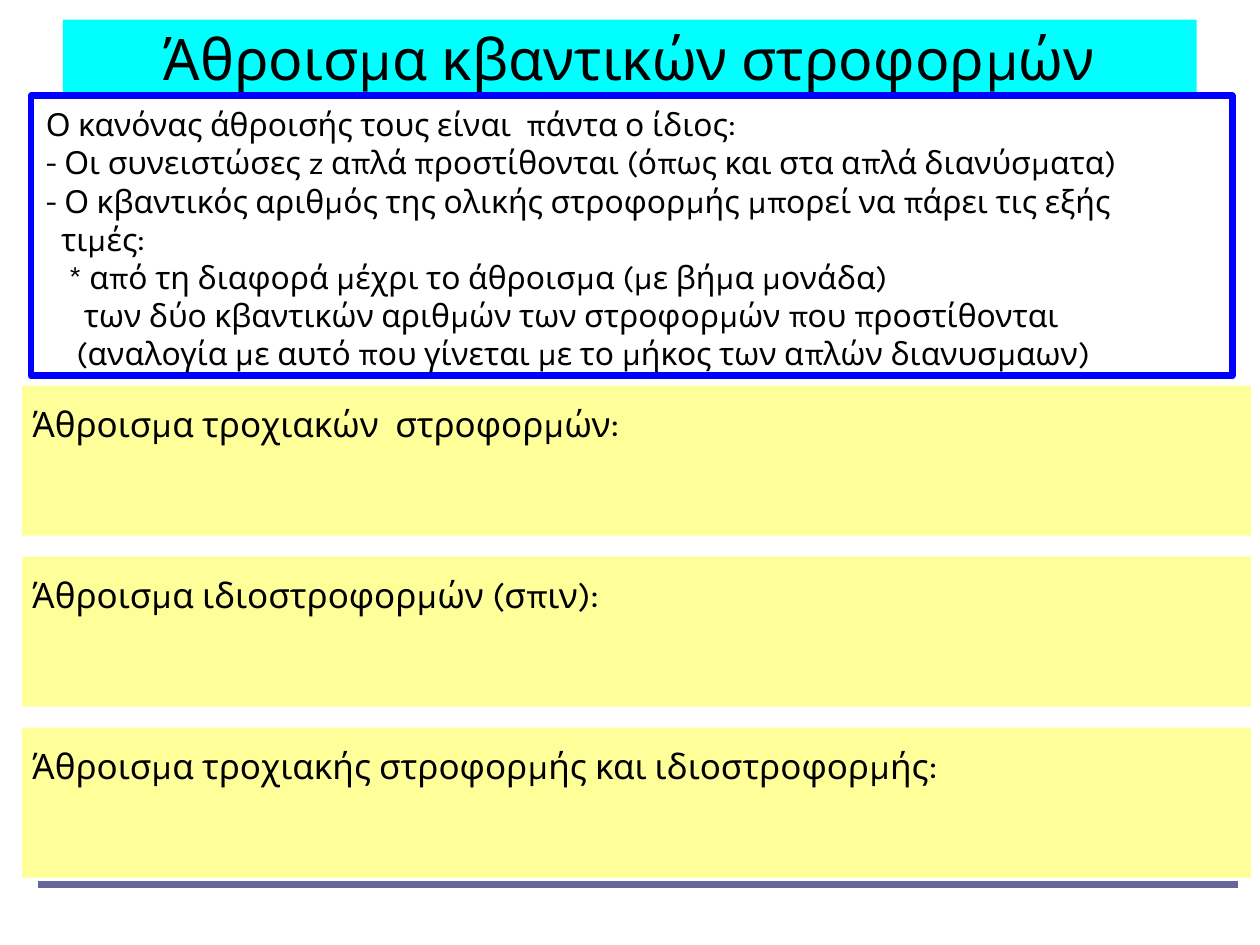
"""Build the slide on adding quantum angular momenta."""
import pptx
import pptx.util
import pptx.dml.color
import pptx.enum.shapes
import pptx.enum.text
import lxml.etree

Pt = pptx.util.Pt
ANCHOR = pptx.enum.text.MSO_ANCHOR
ALIGN = pptx.enum.text.PP_ALIGN
DRAWING = "{http://schemas.openxmlformats.org/drawingml/2006/main}"
COLOURS = {"text": "000000", "title": "00FFFF", "border": "0000FF",
           "panel": "FFFF99", "rule": "666699"}


def colour(name):
    return pptx.dml.color.RGBColor.from_string(COLOURS[name])


def format_text(frame, size, align, anchor, side, edge):
    frame.auto_size = pptx.enum.text.MSO_AUTO_SIZE.NONE
    frame.vertical_anchor = anchor
    frame.margin_left = frame.margin_right = Pt(side)
    frame.margin_top = frame.margin_bottom = Pt(edge)
    for paragraph in frame.paragraphs:
        paragraph.alignment = align
        paragraph.space_before = Pt(0)
        paragraph.font.size = Pt(size)
        paragraph.font.name = "Karla"
        paragraph.font.color.rgb = colour("text")


presentation = pptx.Presentation()
presentation.slide_width = Pt(793.7)
presentation.slide_height = Pt(595.28)
presentation.element.sldSz.attrib.pop("type", None)
slide = presentation.slides.add_slide(presentation.slide_layouts[1])
title, rules = slide.placeholders

footer_line = slide.shapes.add_connector(
    pptx.enum.shapes.MSO_CONNECTOR.STRAIGHT, Pt(23.8), Pt(557), Pt(779.8), Pt(557))
footer_line.line.color.rgb = colour("rule")
footer_line.line.width = Pt(4.31)
lxml.etree.SubElement(footer_line._element.spPr, DRAWING + "effectLst")

title.left, title.top, title.width, title.height = Pt(39.6), Pt(12.4), Pt(714.2), Pt(48.2)
title.fill.solid()
title.fill.fore_color.rgb = colour("title")
title.text_frame.text = "Άθροισμα κβαντικών στροφορμών"
format_text(title.text_frame, 36, ALIGN.CENTER, ANCHOR.MIDDLE, 0, 0)

rule_lines = [
    (0, "Ο κανόνας άθροισής τους είναι  πάντα ο ίδιος:"),
    (0, "- Οι συνειστώσες z απλά προστίθονται (όπως και στα απλά διανύσματα)"),
    (0, "- Ο κβαντικός αριθμός της ολικής στροφορμής μπορεί να πάρει τις εξής"),
    (9.6, "τιμές:"),
    (14.4, "* από τη διαφορά μέχρι το άθροισμα (με βήμα μονάδα)"),
    (24, "των δύο κβαντικών αριθμών των στροφορμών που προστίθονται"),
    (19.2, "(αναλογία με αυτό που γίνεται με το μήκος των απλών διανυσμαων)"),
]
rules.left, rules.top, rules.width, rules.height = Pt(19.5), Pt(60.4), Pt(756.7), Pt(176.4)
rules.line.color.rgb = colour("border")
rules.line.width = Pt(4.31)
rules.text_frame.text = "\n".join(line for indent, line in rule_lines)
format_text(rules.text_frame, 20, ALIGN.LEFT, ANCHOR.TOP, 9.36, 5.76)
for paragraph, (indent, line) in zip(rules.text_frame.paragraphs, rule_lines):
    properties = paragraph._p.get_or_add_pPr()
    properties.set("marL", str(Pt(indent)))
    properties.set("indent", "0")
    lxml.etree.SubElement(properties, DRAWING + "buNone")

sums = [
    ("Άθροισμα τροχιακών  στροφορμών:", 408),
    ("Άθροισμα ιδιοστροφορμών (σπιν):", 388),
    ("Άθροισμα τροχιακής στροφορμής και ιδιοστροφορμής:", 621),
]
for index, (label, width) in enumerate(sums):
    top = 243 + index * 107.7
    panel = slide.shapes.add_shape(
        pptx.enum.shapes.MSO_SHAPE.RECTANGLE, Pt(14), Pt(top), Pt(774), Pt(94.5))
    panel.shadow.inherit = False
    panel.fill.solid()
    panel.fill.fore_color.rgb = colour("panel")
    panel.line.fill.background()
    heading = slide.shapes.add_textbox(Pt(13.4), Pt(top + 6.9), Pt(width), Pt(33.1))
    heading.text_frame.text = label
    heading.text_frame.word_wrap = False
    format_text(heading.text_frame, 22, ALIGN.LEFT, ANCHOR.TOP, 7.2, 3.6)

presentation.save("out.pptx")
